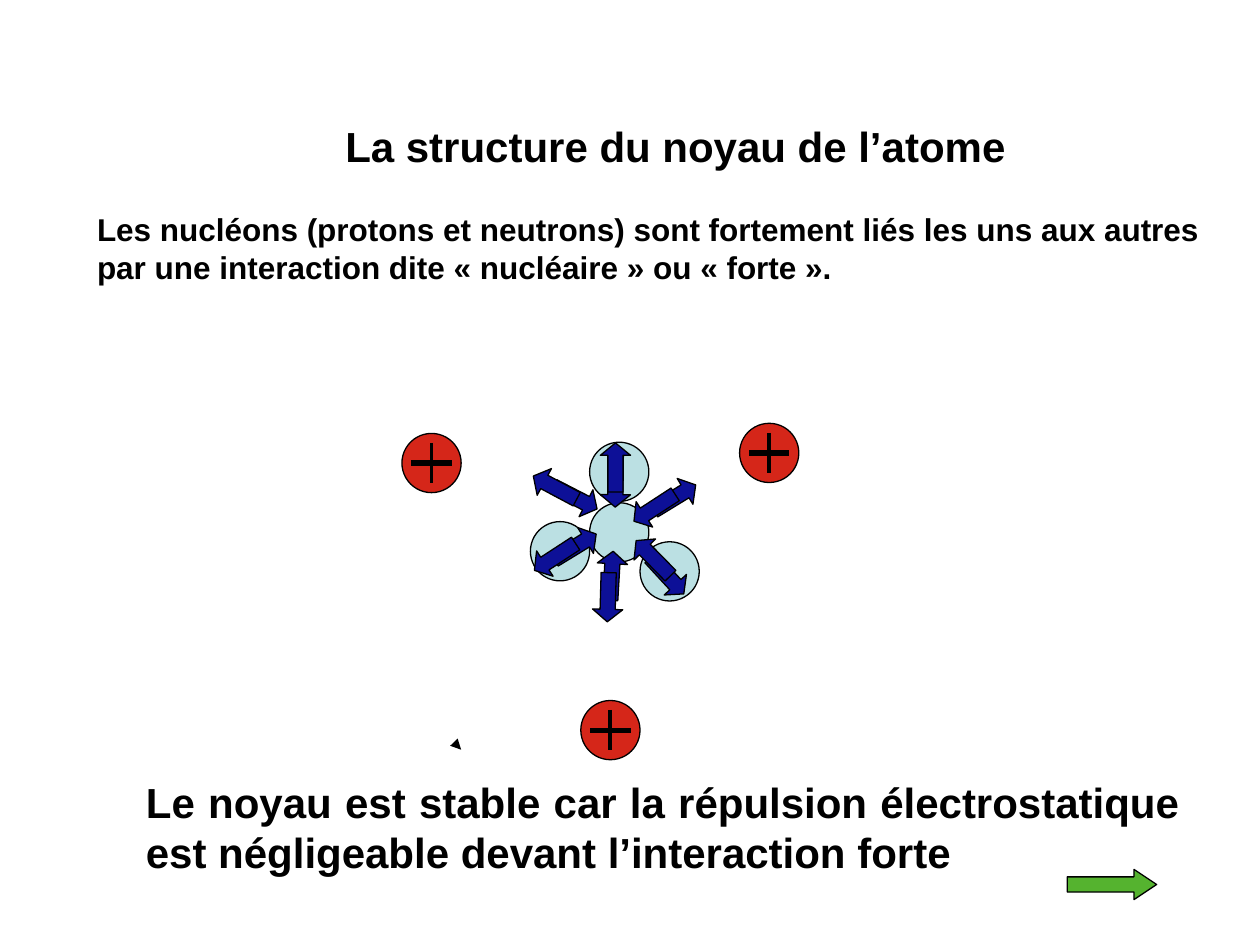
"""Build the slide on the structure of the atomic nucleus."""
from lxml import etree
from pptx import Presentation
from pptx.dml.color import RGBColor
from pptx.enum.shapes import MSO_CONNECTOR, MSO_SHAPE
from pptx.enum.text import MSO_ANCHOR, MSO_AUTO_SIZE, PP_ALIGN
from pptx.oxml.ns import qn
from pptx.util import Inches, Pt

THEME = {
    "font": "Arial", "title": 24, "body": 18, "thin": 0.75, "plus": (2.25, 3),
    "ink": "000000", "neutron": "BBE0E3", "proton": "D52619",
    "force": "0D1097", "next": "55B32F",
}
TITLE = ["La structure du noyau de l’atome"]
INTRO = [
    "Les nucléons (protons et neutrons) sont fortement liés les uns aux autres",
    "par une interaction dite « nucléaire » ou « forte ».",
]
CONCLUSION = [
    "Le noyau est stable car la répulsion électrostatique "
    "est négligeable devant l’interaction forte"
]
DIAMETER, PLUS = 0.47, 0.32
NEUTRONS = [(4.68, 3.51), (4.68, 3.99), (4.21, 4.14), (5.08, 4.3)]
PROTONS = [(5.87, 3.36), (3.19, 3.44), (4.61, 5.56)]
FORCES = [
    (4.67, 3.69, 0.43, 90.6), (4.69, 3.59, 0.39, 270),
    (4.37, 3.83, 0.39, 27.2), (5.16, 3.83, 0.39, 328.6),
    (5, 3.91, 0.39, 146.9), (4.21, 3.75, 0.39, 208.1),
    (5.1, 4.45, 0.39, 47.3), (4.99, 4.31, 0.39, 225.6),
    (4.37, 4.22, 0.39, 328.6), (4.21, 4.3, 0.39, 146.9),
    (4.66, 4.45, 0.39, 273.3), (4.63, 4.62, 0.39, 91.6),
]
MARK = ((3.65, 5.94), (3.66, 5.95))


def color(name):
    return RGBColor.from_string(THEME[name])


def write(sp, lines, box, size="body", align=PP_ALIGN.LEFT):
    sp.left, sp.top, sp.width, sp.height = map(Inches, box)
    tf = sp.text_frame
    tf.word_wrap = True
    tf.auto_size = MSO_AUTO_SIZE.NONE
    tf.vertical_anchor = MSO_ANCHOR.TOP
    for i, line in enumerate(lines):
        p = tf.add_paragraph() if i else tf.paragraphs[0]
        p.alignment = align
        p.space_before = Pt(0)
        pPr = p._p.get_or_add_pPr()
        pPr.set("marL", "0")
        pPr.set("indent", "0")
        etree.SubElement(pPr, qn("a:buNone"))
        r = p.add_run()
        r.text = line
        r.font.name, r.font.size, r.font.bold = THEME["font"], Pt(THEME[size]), True
        r.font.color.rgb = color("ink")


def add_shape(s, kind, box, fill, rotation=0, head=None):
    sp = s.shapes.add_shape(kind, *map(Inches, box))
    sp.shadow.inherit = False
    sp.fill.solid()
    sp.fill.fore_color.rgb = color(fill)
    sp.line.color.rgb = color("ink")
    sp.line.width = Pt(THEME["thin"])
    sp.rotation = rotation
    if head:
        sp.adjustments[1] = head


def add_line(s, start, end, width, arrow=False):
    sp = s.shapes.add_connector(MSO_CONNECTOR.STRAIGHT, *map(Inches, start + end))
    sp.line.color.rgb = color("ink")
    sp.line.width = Pt(width)
    spPr = sp._element.spPr
    if arrow:
        etree.SubElement(spPr.find(qn("a:ln")), qn("a:tailEnd"), type="triangle")
    etree.SubElement(spPr, qn("a:effectLst"))


def add_proton(s, x, y):
    add_shape(s, MSO_SHAPE.OVAL, (x, y, DIAMETER, DIAMETER), "proton")
    cx, cy, half = x + DIAMETER / 2, y + DIAMETER / 2, PLUS / 2
    upright, level = THEME["plus"]
    add_line(s, (cx, cy - half), (cx, cy + half), upright)
    add_line(s, (cx - half, cy), (cx + half, cy), level)


def main():
    prs = Presentation()
    prs.slide_width, prs.slide_height = Inches(10), Inches(7.5)
    s = prs.slides.add_slide(prs.slide_layouts[1])
    write(s.shapes.title, TITLE, (2.64, 0.91, 5.7, 0.5), size="title")
    write(s.placeholders[1], INTRO, (0.67, 1.62, 9.2, 0.7))
    for x, y in NEUTRONS:
        add_shape(s, MSO_SHAPE.OVAL, (x, y, DIAMETER, DIAMETER), "neutron")
    add_line(s, *MARK, THEME["thin"], arrow=True)
    for x, y in PROTONS:
        add_proton(s, x, y)
    for x, y, length, angle in FORCES:
        add_shape(s, MSO_SHAPE.RIGHT_ARROW, (x, y, length, 0.24), "force", angle, 0.41)
    box = (1.06, 6.11, 8.4, 0.9)
    write(s.shapes.add_textbox(*map(Inches, box)), CONCLUSION, box,
          size="title", align=PP_ALIGN.JUSTIFY)
    add_shape(s, MSO_SHAPE.RIGHT_ARROW, (8.47, 6.9, 0.71, 0.24), "next", head=0.75)
    prs.save("out.pptx")


if __name__ == "__main__":
    main()
